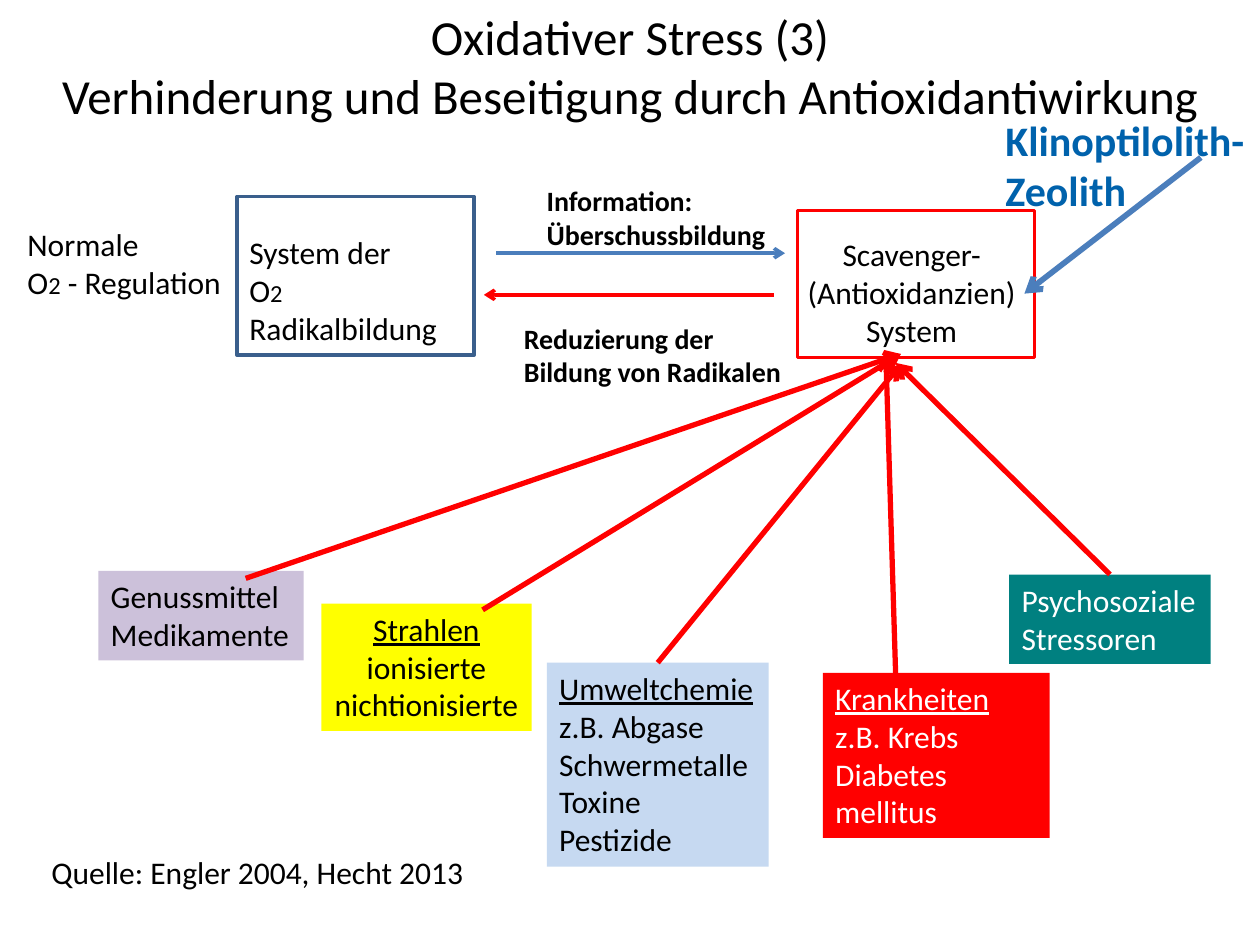
from dataclasses import dataclass
from typing import Optional

import pptx
import pptx.util
import pptx.dml.color
import pptx.enum.shapes
import pptx.enum.text
import pptx.oxml
import pptx.oxml.ns

Pt = pptx.util.Pt
ALIGN = pptx.enum.text.PP_ALIGN
ANCHOR = pptx.enum.text.MSO_ANCHOR
COLORS = {
    "black": "000000", "white": "FFFFFF", "red": "FF0000", "blue": "4B7EBC",
    "dark_blue": "3A5F8C", "zeolite": "0062AC", "lilac": "CCC1DA",
    "yellow": "FFFF00", "pale_blue": "C6D9F1", "teal": "008080",
}


@dataclass
class Box:
    left: float
    top: float
    width: float
    height: float
    lines: tuple[str, ...] = ()
    fill: Optional[str] = None
    border: Optional[str] = None
    color: str = "black"
    size: float = 18
    bold: bool = False
    heading: bool = False
    centered: bool = False
    wrap: bool = False
    middle: bool = False


@dataclass
class Arrow:
    x1: float
    y1: float
    x2: float
    y2: float
    color: str = "red"
    width: float = 3
    source: Optional[str] = None


def rgb(name: str) -> pptx.dml.color.RGBColor:
    return pptx.dml.color.RGBColor.from_string(COLORS[name])


def write_text(tf, lines: tuple[str, ...], *, size: float, color: str, bold: bool,
               heading: bool, centered: bool, wrap: bool, middle: bool) -> None:
    """Write one paragraph per line; parts between bars are set as small index."""
    tf.word_wrap = wrap
    tf.vertical_anchor = ANCHOR.MIDDLE if middle else ANCHOR.TOP
    for i, line in enumerate(lines):
        p = tf.paragraphs[0] if i == 0 else tf.add_paragraph()
        p.alignment = ALIGN.CENTER if centered else ALIGN.LEFT
        for j, part in enumerate(line.split("|")):
            if not part:
                continue
            r = p.add_run()
            r.text = part
            r.font.name = "Calibri"
            r.font.size = Pt(14 if j % 2 else size)
            r.font.bold = bold
            r.font.underline = heading and i == 0
            r.font.color.rgb = rgb(color)


def draw_box(shapes, box: Box):
    frame = Pt(box.left), Pt(box.top), Pt(box.width), Pt(box.height)
    if box.fill or box.border:
        sp = shapes.add_shape(pptx.enum.shapes.MSO_SHAPE.RECTANGLE, *frame)
        sp.shadow.inherit = False
        if box.fill:
            sp.fill.solid()
            sp.fill.fore_color.rgb = rgb(box.fill)
        else:
            sp.fill.background()
        if box.border:
            sp.line.color.rgb = rgb(box.border)
            sp.line.width = Pt(2)
        else:
            sp.line.fill.background()
    else:
        sp = shapes.add_textbox(*frame)
    if box.lines:
        write_text(sp.text_frame, box.lines, size=box.size, color=box.color,
                   bold=box.bold, heading=box.heading, centered=box.centered,
                   wrap=box.wrap, middle=box.middle)
    return sp


def draw_arrow(shapes, arrow: Arrow, factors: dict) -> None:
    cxn = shapes.add_connector(
        pptx.enum.shapes.MSO_CONNECTOR.STRAIGHT,
        Pt(arrow.x1), Pt(arrow.y1), Pt(arrow.x2), Pt(arrow.y2))
    if arrow.source:
        cxn.begin_connect(factors[arrow.source], 0)
    cxn.line.color.rgb = rgb(arrow.color)
    cxn.line.width = Pt(arrow.width)
    pptx.oxml.ns.qn("a:tailEnd")
    ln = cxn.line._get_or_add_ln()
    ln.append(pptx.oxml.parse_xml(
        f'<a:tailEnd {pptx.oxml.ns.nsdecls("a")} type="arrow"/>'))
    cxn._element.spPr.append(pptx.oxml.parse_xml(
        f'<a:effectLst {pptx.oxml.ns.nsdecls("a")}/>'))


LABELS = [
    Box(0, 0, 720, 74.9,
        ("Oxidativer Stress (3)",
         "Verhinderung und Beseitigung durch Antioxidantiwirkung"),
        size=28, centered=True, wrap=True, middle=True),
    Box(8.6, 125.3, 128.9, 51.1, ("Normale", "O|2| - Regulation")),
    Box(135.4, 112.3, 135.4, 90.7, border="dark_blue"),
    Box(135.4, 129.6, 135.4, 72.7, ("System der", "O|2 |Radikalbildung"), wrap=True),
    Box(455.8, 120.2, 135.4, 84.2, border="red"),
    Box(450.7, 131, 140.4, 72.7, ("Scavenger-", "(Antioxidanzien)", "System"),
        centered=True, wrap=True),
    Box(305.3, 101.5, 141.1, 46.1, ("Information:", "Überschussbildung"),
        size=16, bold=True),
    Box(292.3, 180, 163.4, 46.1, ("Reduzierung der", "Bildung von Radikalen"),
        size=16, bold=True),
    Box(567.4, 61.9, 152.6, 65.5, ("Klinoptilolith-", "Zeolith"),
        size=24, bold=True, color="zeolite"),
    Box(22.3, 483.8, 252.7, 28.8, ("Quelle: Engler 2004, Hecht 2013",)),
]

FACTORS = [
    Box(56.2, 326.2, 117.4, 51.1, ("Genussmittel", "Medikamente"), "lilac"),
    Box(183.6, 344.9, 120.2, 72.7, ("Strahlen", "ionisierte", "nichtionisierte"),
        "yellow", heading=True, centered=True),
    Box(312.5, 378.7, 126.7, 116.6,
        ("Umweltchemie", "z.B. Abgase", "Schwermetalle", "Toxine", "Pestizide"),
        "pale_blue", heading=True),
    Box(470.2, 384.5, 129.6, 94.3, ("Krankheiten", "z.B. Krebs", "Diabetes mellitus"),
        "red", color="white", heading=True, wrap=True),
    Box(576.7, 328.3, 115.2, 51.1, ("Psychosoziale", "Stressoren"),
        "teal", color="white"),
]

ARROWS = [
    Arrow(283.7, 144.7, 448.6, 144.7, "blue", 2),
    Arrow(442.1, 168.5, 276.5, 168.5, "red", 2),
    Arrow(686.2, 90, 585.4, 167.8, "blue", 3.25),
    Arrow(140.4, 330.5, 514.8, 202.3),
    Arrow(275.8, 348.5, 514.8, 202.3),
    Arrow(375.8, 378.7, 514.8, 208.1, source="Umweltchemie"),
    Arrow(511.9, 388.1, 506.2, 202.3),
    Arrow(634.3, 328.3, 511.9, 207.4, source="Psychosoziale"),
]


def main() -> None:
    prs = pptx.Presentation()
    prs.slide_width, prs.slide_height = Pt(720), Pt(540)
    shapes = prs.slides.add_slide(prs.slide_layouts[6]).shapes
    for label in LABELS:
        draw_box(shapes, label)
    factors = {factor.lines[0]: draw_box(shapes, factor) for factor in FACTORS}
    for arrow in ARROWS:
        draw_arrow(shapes, arrow, factors)
    prs.save("out.pptx")


if __name__ == "__main__":
    main()
